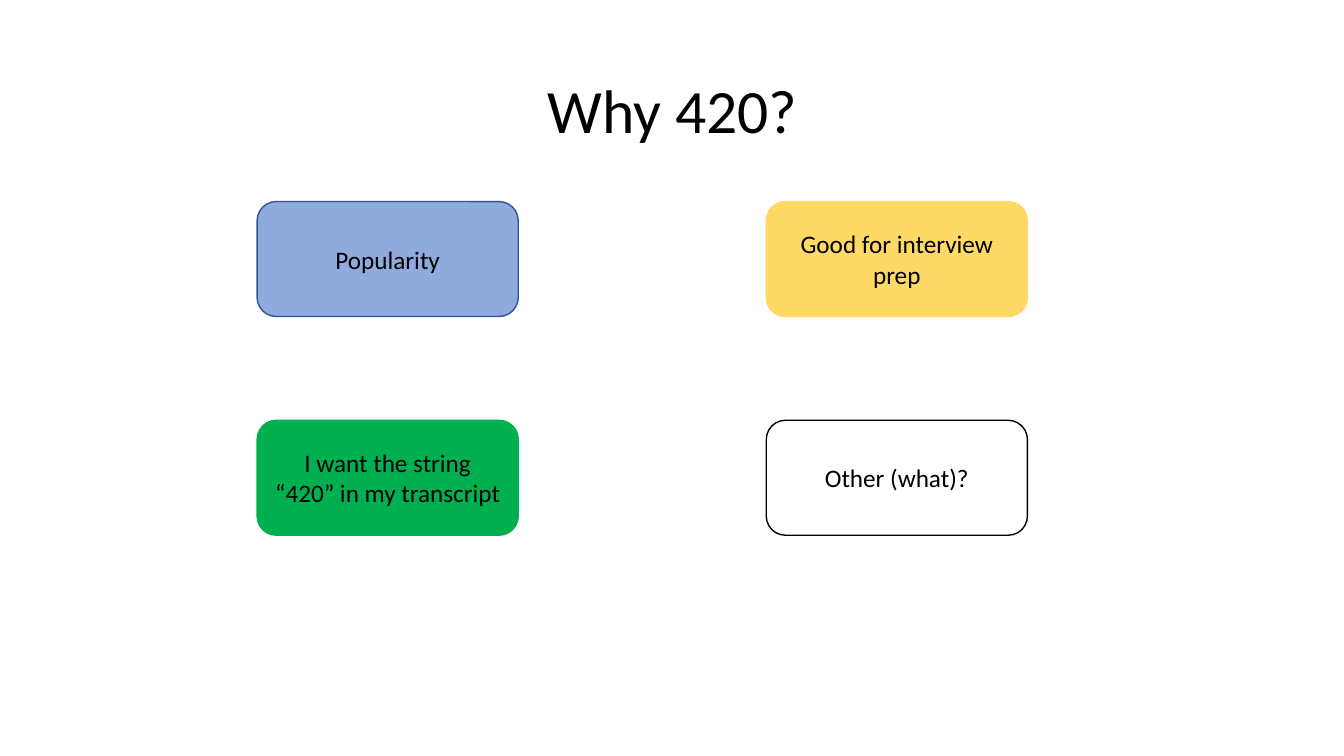
"""Build the "Why 420?" slide: a title above a two-by-two grid of reasons."""
import pptx
import pptx.dml.color
import pptx.enum.shapes
import pptx.enum.text
import pptx.util

Inches = pptx.util.Inches


def color(hex_string):
    return pptx.dml.color.RGBColor.from_string(hex_string)


def write_text(shape, text, size=18, line_spacing=1.0):
    frame = shape.text_frame
    frame.word_wrap = True
    frame.vertical_anchor = pptx.enum.text.MSO_ANCHOR.MIDDLE
    frame.text = text
    for paragraph in frame.paragraphs:
        paragraph.alignment = pptx.enum.text.PP_ALIGN.CENTER
        paragraph.line_spacing = line_spacing
        paragraph.font.name = "Calibri"
        paragraph.font.size = pptx.util.Pt(size)
        paragraph.font.color.rgb = color("000000")


presentation = pptx.Presentation()
presentation.slide_width = Inches(13.33)
presentation.slide_height = Inches(7.5)
slide = presentation.slides.add_slide(presentation.slide_layouts[6])

title = slide.shapes.add_textbox(Inches(0.92), Inches(0.4), Inches(11.5), Inches(1.45))
write_text(title, "Why 420?", size=44, line_spacing=0.9)

reasons = [
    ("Popularity", "8FAADC", "2F5597"),
    ("Good for interview\nprep", "FFD966", "FFD966"),
    ("I want the string “420” in my transcript", "00B050", "00B050"),
    ("Other (what)?", "FFFFFF", "000000"),
]
for index, (text, fill, outline) in enumerate(reasons):
    row, column = divmod(index, 2)
    box = slide.shapes.add_shape(
        pptx.enum.shapes.MSO_SHAPE.ROUNDED_RECTANGLE,
        Inches(2.55 + 5.05 * column), Inches(2 + 2.17 * row),
        Inches(2.59), Inches(1.14),
    )
    box.shadow.inherit = False
    box.fill.solid()
    box.fill.fore_color.rgb = color(fill)
    box.line.color.rgb = color(outline)
    box.line.width = pptx.util.Pt(1)
    write_text(box, text)

presentation.save("out.pptx")
